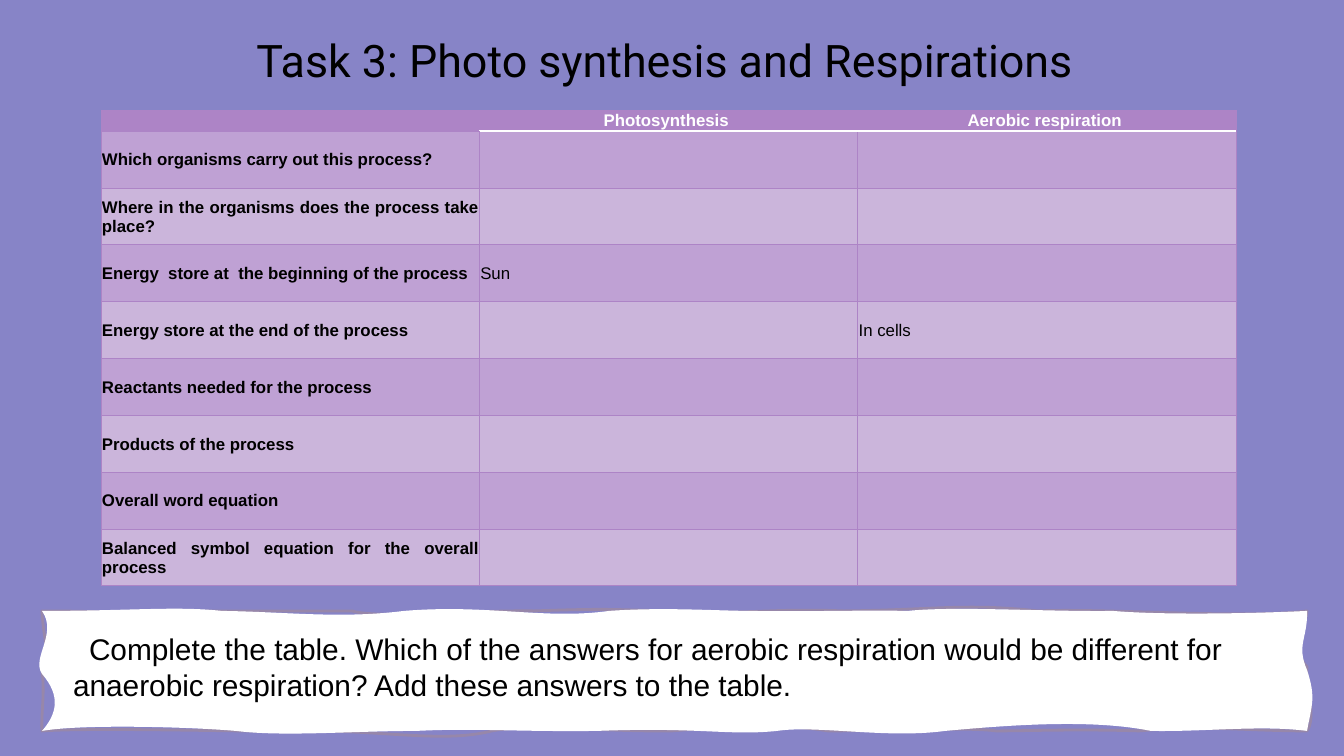
from lxml.etree import SubElement
from pptx import Presentation
from pptx.dml.color import RGBColor
from pptx.enum.text import MSO_ANCHOR, PP_ALIGN
from pptx.oxml.ns import qn
from pptx.util import Pt

SCALE = 914400 / 134.4  # EMU in one px
COLORS = {
    "background": "8784C7", "header": "AD84C6", "band": "BFA1D4", "plain": "CBB5DB",
    "panel": "FFFFFF", "sketch": "9787AA", "ink": "000000", "white": "FFFFFF",
}
# The closing space shifts the centred headings slightly to the left
HEADINGS = ["", "Photosynthesis ", "Aerobic respiration "]
QUESTIONS = [  # question, photosynthesis, aerobic respiration
    ("Which organisms carry out this process?", "", ""),
    ("Where in the organisms does the process take place?", "", ""),
    ("Energy  store at  the beginning of the process", "Sun", ""),
    ("Energy store at the end of the process", "", "In cells"),
    ("Reactants needed for the process", "", ""),
    ("Products of the process", "", ""),
    ("Overall word equation", "", ""),
    ("Balanced symbol equation for the overall process", "", ""),
]
JUSTIFIED = {1, 2, 4, 8}

# Wavy edges from the panel's corner: two control points and an end point each
SKETCH_EDGE = [
    (71, 0, 91, 4, 168, 0), (245, 0, 286, 0, 310, 0), (336, 8, 427, -1, 492, 0),
    (577, -3, 566, -1, 634, 0), (707, 4, 726, -3, 802, 0), (891, -1, 923, -8, 996, 0),
    (1063, -3, 1200, 8, 1265, 0), (1262, 23, 1249, 39, 1265, 56),
    (1263, 73, 1275, 106, 1265, 120), (1203, 120, 1163, 114, 1097, 120),
    (1036, 118, 984, 120, 954, 120), (925, 116, 845, 120, 786, 120),
    (749, 114, 704, 114, 630, 120), (567, 121, 485, 113, 450, 120),
    (406, 131, 359, 122, 282, 120), (222, 122, 63, 116, 0, 120),
    (-1, 99, 3, 85, 0, 59), (8, 36, 1, 27, 0, 0),
]
PAPER_EDGE = [
    (89, 0, 134, -5, 180, 0), (246, 1, 298, 8, 362, 0), (446, -7, 503, 9, 567, 0),
    (622, -4, 676, 0, 710, 0), (767, 1, 818, -1, 866, 0), (911, -5, 1008, 1, 1071, 0),
    (1116, 4, 1204, 3, 1265, 0), (1266, 27, 1254, 34, 1265, 59),
    (1274, 87, 1270, 93, 1265, 120), (1219, 114, 1164, 121, 1109, 120),
    (1050, 108, 969, 114, 903, 120), (845, 128, 774, 114, 735, 120),
    (687, 125, 657, 116, 555, 120), (472, 121, 435, 117, 374, 120),
    (310, 120, 242, 126, 194, 120), (148, 116, 40, 113, 0, 120),
    (15, 103, 19, 85, 0, 63), (-11, 47, 16, 23, 0, 0),
]


def px(length):
    return round(length * SCALE)


def rgb(name):
    return RGBColor.from_string(COLORS[name])


def style(paragraph, font, size, color="ink", bold=False, align=PP_ALIGN.LEFT):
    paragraph.alignment = align
    paragraph.font.name = font
    paragraph.font.size = Pt(size)
    paragraph.font.bold = bold
    paragraph.font.color.rgb = rgb(color)


def add_text(slide, box, text, font, size, align, spacing, margins):
    frame = slide.shapes.add_textbox(*map(px, box)).text_frame
    frame.word_wrap = True
    frame.margin_left = frame.margin_right = px(margins[0])
    frame.margin_top = px(margins[1])
    paragraph = frame.paragraphs[0]
    paragraph.text = text
    paragraph.line_spacing = spacing
    style(paragraph, font, size, align=align)
    return paragraph


def add_title(slide, box):
    add_text(slide, box, "Task 3: Photo synthesis and Respirations",
             "Roboto", 24, PP_ALIGN.CENTER, 0.9, (13, 13))


def set_border(cell, side, color, width):
    line = SubElement(cell._tc.get_or_add_tcPr(), qn(f"a:ln{side}"), w=str(Pt(width)))
    fill = SubElement(line, qn("a:solidFill"))
    SubElement(fill, qn("a:srgbClr"), val=COLORS[color])


def fill_cell(cell, row, column, text):
    header, question = row == 0, column == 0
    # Borders come before the fill in the cell properties
    for side in "LRTB":
        under_header = header and not question and side == "B"
        beside_question = question and not header and side == "R"
        set_border(cell, side, "white" if under_header else "header",
                   1 if under_header or beside_question else 0.5)
    cell.fill.solid()
    cell.fill.fore_color.rgb = rgb("header" if header else "band" if row % 2 else "plain")
    cell.margin_left = cell.margin_right = cell.margin_top = px(1)
    cell.margin_bottom = 0
    cell.vertical_anchor = MSO_ANCHOR.MIDDLE
    paragraph = cell.text_frame.paragraphs[0]
    if text:
        paragraph.text = text
    align = PP_ALIGN.LEFT
    if header:
        align = PP_ALIGN.CENTER
    elif question and row in JUSTIFIED:
        align = PP_ALIGN.JUSTIFY
    style(paragraph, "Arial", 9, "white" if header else "ink", header or question, align)


def add_comparison(slide, box, header_height=21):
    rows = [HEADINGS, *QUESTIONS]
    table = slide.shapes.add_table(len(rows), len(HEADINGS), *map(px, box)).table
    for column in table.columns:
        column.width = px(box[2] / len(HEADINGS))
    body_height = (box[3] - header_height) / len(QUESTIONS)
    for r, texts in enumerate(rows):
        table.rows[r].height = px(body_height if r else header_height)
        for c, text in enumerate(texts):
            fill_cell(table.cell(r, c), r, c, text)


def add_curves(outlines, size, edge, **paint):
    """Add one closed outline of Bezier curves, starting at the corner."""
    outline = SubElement(outlines, qn("a:path"), w=str(size[0]), h=str(size[1]), **paint)
    SubElement(SubElement(outline, qn("a:moveTo")), qn("a:pt"), x="0", y="0")
    for curve in edge:
        bezier = SubElement(outline, qn("a:cubicBezTo"))
        for x, y in zip(curve[::2], curve[1::2]):
            SubElement(bezier, qn("a:pt"), x=str(x), y=str(y))
    SubElement(outline, qn("a:close"))


def add_paper(slide, left, top, width, height):
    builder = slide.shapes.build_freeform(px(left), px(top), scale=1.0)
    right, bottom = px(left + width), px(top + height)
    builder.add_line_segments([(right, px(top)), (right, bottom), (px(left), bottom)])
    paper = builder.convert_to_shape()
    paper.shadow.inherit = False
    paper.fill.solid()
    paper.fill.fore_color.rgb = rgb("panel")
    paper.line.color.rgb = rgb("sketch")
    paper.line.width = Pt(1.5)
    # Curved edges: a sketched line, partly covered by the filled paper
    outlines = next(paper._element.iter(qn("a:pathLst")))
    outlines.remove(outlines[0])
    add_curves(outlines, (width, height), SKETCH_EDGE, fill="none")
    add_curves(outlines, (width, height), PAPER_EDGE, stroke="0")


def add_instruction(slide, box):
    left, top, width, height = box
    add_paper(slide, *box)
    # Instruction with an indented first line
    task = add_text(
        slide, (left + 18, top - 22, width - 18, height + 5),
        "Complete the table. Which of the answers for aerobic respiration would be "
        "different for anaerobic respiration? Add these answers to the table.",
        "Arial", 16, PP_ALIGN.LEFT, 1, (13, 42))
    task._p.get_or_add_pPr().set("indent", str(px(16)))


def main():
    prs = Presentation()
    prs.slide_width, prs.slide_height = px(1344), px(756)
    slide = prs.slides.add_slide(prs.slide_layouts[6])
    slide.background.fill.solid()
    slide.background.fill.fore_color.rgb = rgb("background")
    add_instruction(slide, (42, 611, 1265, 120))
    add_title(slide, (0, 26, 1329, 141))
    add_comparison(slide, (101, 110, 1135, 476))
    prs.save("out.pptx")


if __name__ == "__main__":
    main()
